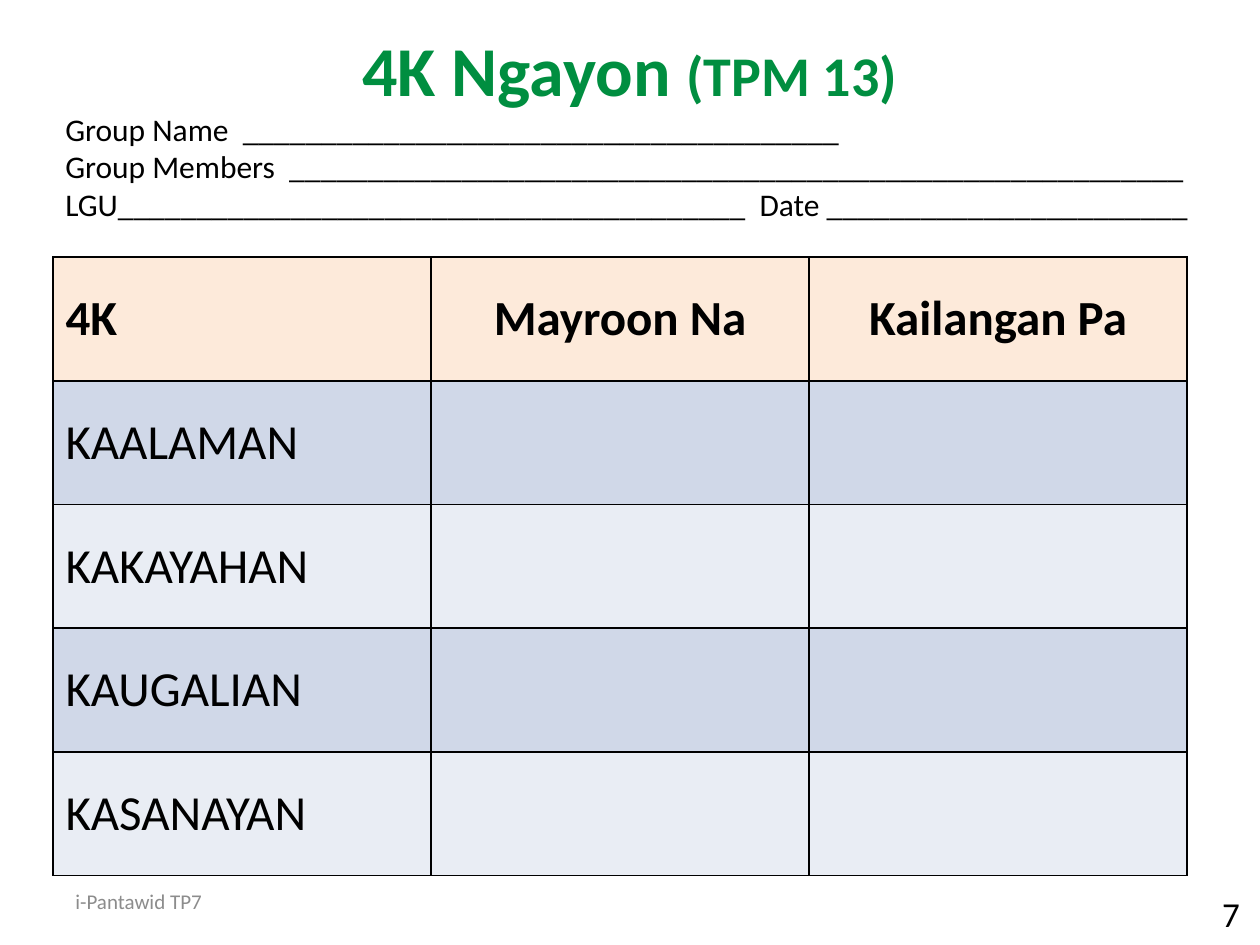
from lxml import etree
from pptx import Presentation
from pptx.dml.color import RGBColor
from pptx.enum.text import MSO_ANCHOR, PP_ALIGN
from pptx.oxml.ns import qn
from pptx.util import Inches, Pt

LEFT, CENTER, RIGHT = PP_ALIGN.LEFT, PP_ALIGN.CENTER, PP_ALIGN.RIGHT
TOP, MIDDLE = MSO_ANCHOR.TOP, MSO_ANCHOR.MIDDLE

GREEN = RGBColor(0x00, 0x8E, 0x40)
BLACK = RGBColor(0x00, 0x00, 0x00)
GRAY = RGBColor(0x8C, 0x8C, 0x8C)
PEACH = RGBColor(0xFD, 0xEA, 0xDA)
BLUE_BAND = RGBColor(0xD0, 0xD8, 0xE8)
PALE_BAND = RGBColor(0xE9, 0xED, 0xF4)

FONT = "Calibri"
HEADINGS = ["4K", "Mayroon Na", "Kailangan Pa"]
TOPICS = ["KAALAMAN", "KAKAYAHAN", "KAUGALIAN", "KASANAYAN"]
FORM_LINES = [
    "Group Name  " + "_" * 38,
    "Group Members  " + "_" * 57,
    "LGU" + "_" * 40 + "  Date " + "_" * 23,
]


def add_run(paragraph, text, size, color=BLACK, bold=False):
    """Append a formatted run to a paragraph."""
    run = paragraph.add_run()
    run.text = text
    run.font.color.rgb = color
    for name, value in {"name": FONT, "size": Pt(size), "bold": bold}.items():
        setattr(run.font, name, value)


def add_text(slide, box, lines, alignment=LEFT, anchor=MIDDLE, wrap=True):
    """Place a text box whose lines are lists of run arguments."""
    frame = slide.shapes.add_textbox(*map(Inches, box)).text_frame
    for name, value in {"word_wrap": wrap, "vertical_anchor": anchor}.items():
        setattr(frame, name, value)
    for index, runs in enumerate(lines):
        paragraph = frame.add_paragraph() if index else frame.paragraphs[0]
        paragraph.alignment = alignment
        for run in runs:
            add_run(paragraph, *run)


def add_title(slide, box):
    """Place the two-size title."""
    runs = [("4K Ngayon ", 40, GREEN, True), ("(TPM 13)", 32, GREEN, True)]
    add_text(slide, box, [runs], CENTER)


def add_form(slide, box):
    """Place the lines to be filled in by the group."""
    lines = [[(line, 18)] for line in FORM_LINES]
    add_text(slide, box, lines, anchor=TOP, wrap=False)


def format_cell(cell, color):
    """Fill a cell and draw a thin black border on its four sides."""
    properties = cell._tc.get_or_add_tcPr()
    for side in ("a:lnL", "a:lnR", "a:lnT", "a:lnB"):
        line = etree.SubElement(properties, qn(side), w=str(Pt(1)))
        fill = etree.SubElement(line, qn("a:solidFill"))
        etree.SubElement(fill, qn("a:srgbClr"), val=str(BLACK))
    cell.fill.solid()
    cell.fill.fore_color.rgb = color
    cell.vertical_anchor = MIDDLE


def add_topic_table(slide, box):
    """Place the table with a heading row and one banded row per topic."""
    rows = [HEADINGS] + [[topic, "", ""] for topic in TOPICS]
    table = slide.shapes.add_table(len(rows), len(HEADINGS), *map(Inches, box)).table
    for row_index, row in enumerate(rows):
        is_heading = row_index == 0
        band = BLUE_BAND if row_index % 2 else PALE_BAND
        for column_index, text in enumerate(row):
            cell = table.cell(row_index, column_index)
            format_cell(cell, PEACH if is_heading else band)
            paragraph = cell.text_frame.paragraphs[0]
            paragraph.alignment = CENTER if column_index else LEFT
            if text:
                add_run(paragraph, text, 28, BLACK, is_heading)


def add_footer(slide, label_box, number_box):
    """Place the footer label and the page number."""
    add_text(slide, label_box, [[("i-Pantawid TP7", 12, GRAY)]])
    add_text(slide, number_box, [[("7", 20)]], RIGHT)


def main():
    """Build and save the slide."""
    presentation = Presentation()
    presentation.slide_width = Inches(10)
    presentation.slide_height = Inches(7.5)
    slide = presentation.slides.add_slide(presentation.slide_layouts[6])
    add_title(slide, (0.5, 0, 9, 1.08))
    add_topic_table(slide, (0.42, 2.04, 9, 4.91))
    add_form(slide, (0.42, 0.82, 9.2, 1.01))
    add_footer(slide, (0.5, 6.95, 2.33, 0.4), (7.61, 7.05, 2.33, 0.4))
    presentation.save("out.pptx")


if __name__ == "__main__":
    main()
